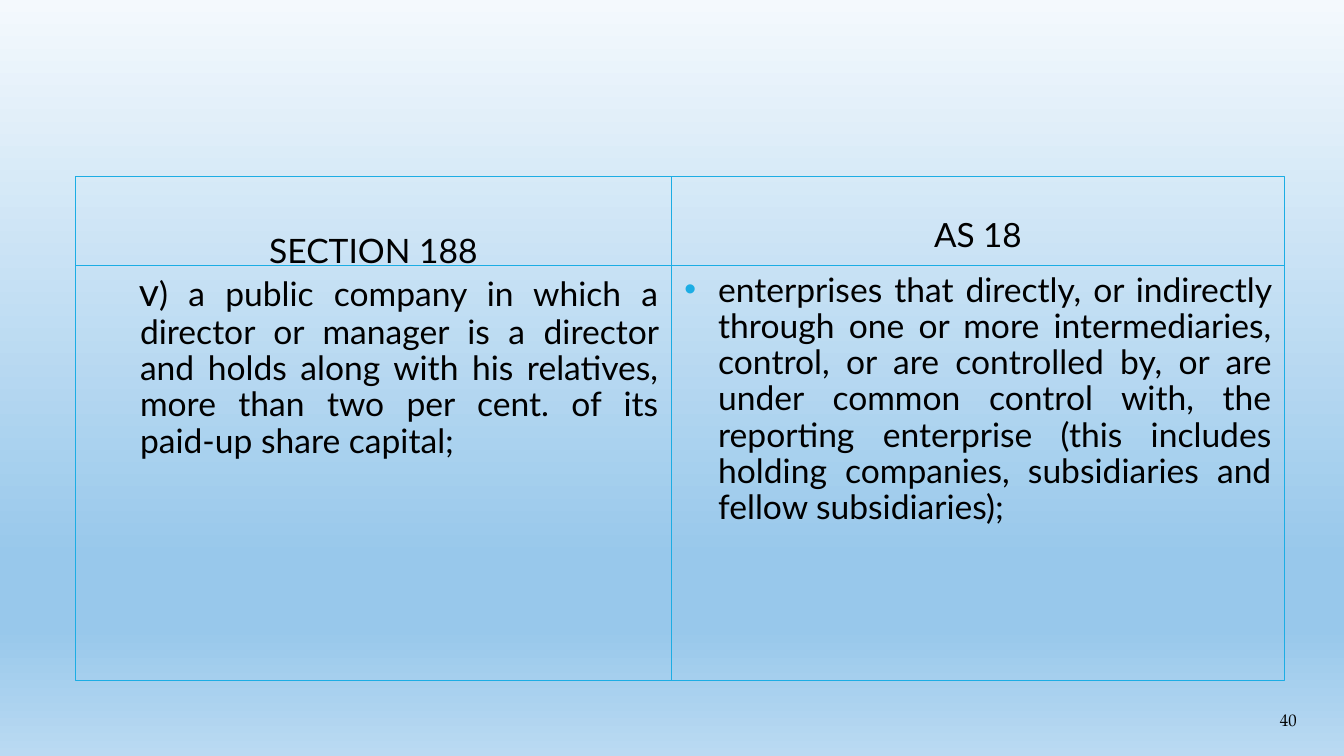
from lxml.etree import SubElement
from pptx import Presentation
from pptx.dml.color import RGBColor
from pptx.enum.shapes import MSO_SHAPE as Shape
from pptx.enum.text import MSO_ANCHOR as Anchor, PP_ALIGN as Align
from pptx.oxml.ns import qn
from pptx.util import Cm, Pt


def color(hex_code):
    return RGBColor.from_string(hex_code)


class ComparisonSlide:
    FONT, NUMBER_FONT = "Lato", "TeX Gyre Pagella"
    INK, ACCENT = "000000", "1CADE4"
    SIDE_INSET, TOP_INSET = 0.33, 0.18

    def __init__(self, slide):
        self.slide = slide

    def background(self, stops):
        """Vertical gradient from (percent, colour) stops, top to bottom."""
        fill = self.slide.background.fill
        fill.gradient()
        fill.gradient_angle = 270
        stop_list = next(self.slide.element.iter(qn("a:gsLst")))
        for old_stop in list(stop_list):
            stop_list.remove(old_stop)
        for percent, hex_code in stops:
            stop = SubElement(stop_list, qn("a:gs"), pos=str(percent * 1000))
            SubElement(stop, qn("a:srgbClr"), val=hex_code)

    def frame(self, shape, anchor, top_inset=TOP_INSET):
        """Prepare the text area of a shape and return its first paragraph."""
        text = shape.text_frame
        text.word_wrap = True
        text.vertical_anchor = anchor
        text.margin_left = text.margin_right = Cm(self.SIDE_INSET)
        text.margin_top = Cm(top_inset)
        text.margin_bottom = Cm(self.TOP_INSET)
        return text.paragraphs[0]

    def cell(self, left, top, width, height, top_inset=TOP_INSET):
        box = self.slide.shapes.add_shape(
            Shape.RECTANGLE, Cm(left), Cm(top), Cm(width), Cm(height))
        box.shadow.inherit = False
        box.fill.background()
        box.line.color.rgb = color(self.ACCENT)
        box.line.width = Pt(0.75)
        return self.frame(box, Anchor.TOP, top_inset)

    def run(self, paragraph, words, size, font=FONT):
        run = paragraph.add_run()
        run.text = words
        run.font.size = Pt(size)
        run.font.name = font
        run.font.color.rgb = color(self.INK)

    def heading(self, left, top, width, height, top_inset, words, size):
        paragraph = self.cell(left, top, width, height, top_inset)
        paragraph.alignment = Align.CENTER
        paragraph.line_spacing = 0.7
        self.run(paragraph, words, size)

    def clause(self, left, top, width, height, runs, indent, first_line, bullet=None):
        paragraph = self.cell(left, top, width, height)
        paragraph.alignment = Align.JUSTIFY
        paragraph.line_spacing = 0.9
        props = paragraph._p.get_or_add_pPr()
        props.set("marL", str(Cm(indent)))
        props.set("indent", str(Cm(first_line)))
        if bullet:
            bullet_color = SubElement(props, qn("a:buClr"))
            SubElement(bullet_color, qn("a:srgbClr"), val=self.ACCENT)
            SubElement(props, qn("a:buFont"), typeface="Arial")
            SubElement(props, qn("a:buChar"), char=bullet)
        for words, size in runs:
            self.run(paragraph, words, size)

    def page_number(self, left, top, width, height, number):
        box = self.slide.shapes.add_textbox(Cm(left), Cm(top), Cm(width), Cm(height))
        paragraph = self.frame(box, Anchor.MIDDLE)
        paragraph.alignment = Align.RIGHT
        self.run(paragraph, number, 12, self.NUMBER_FONT)


def main():
    deck = Presentation()
    deck.slide_width, deck.slide_height = Cm(33.87), Cm(19.05)
    page = ComparisonSlide(deck.slides.add_slide(deck.slide_layouts[6]))
    page.background([(0, "F4F9FD"), (74, "98C8EB"), (83, "98C8EB"), (100, "BADAF2")])

    left, top = 1.9, 4.45
    section_width, standard_width = 15.02, 15.45
    heading_height, clause_height = 2.25, 10.45
    standard_left = left + section_width
    clause_top = top + heading_height

    page.heading(left, top, section_width, heading_height, 1.63, "SECTION 188", 24)
    page.clause(left, clause_top, section_width, clause_height, [
        ("v", 28),
        (") a public company in which a director or manager is a director and holds "
         "along with his relatives, more than two per cent. of its paid-up share "
         "capital;", 24),
    ], indent=1.3, first_line=-0.03)

    page.heading(standard_left, top, standard_width, heading_height, 1.22, "AS 18", 23.8)
    page.clause(standard_left, clause_top, standard_width, clause_height, [
        ("enterprises that directly, or indirectly through one or more intermediaries, "
         "control, or are controlled by, or are under common control with, the "
         "reporting enterprise (this includes holding companies, subsidiaries and "
         "fellow subsidiaries);", 24),
    ], indent=0.85, first_line=-0.85, bullet="•")

    page.page_number(30.76, 17.9, 2.25, 0.5, "40")
    deck.save("out.pptx")


if __name__ == "__main__":
    main()
